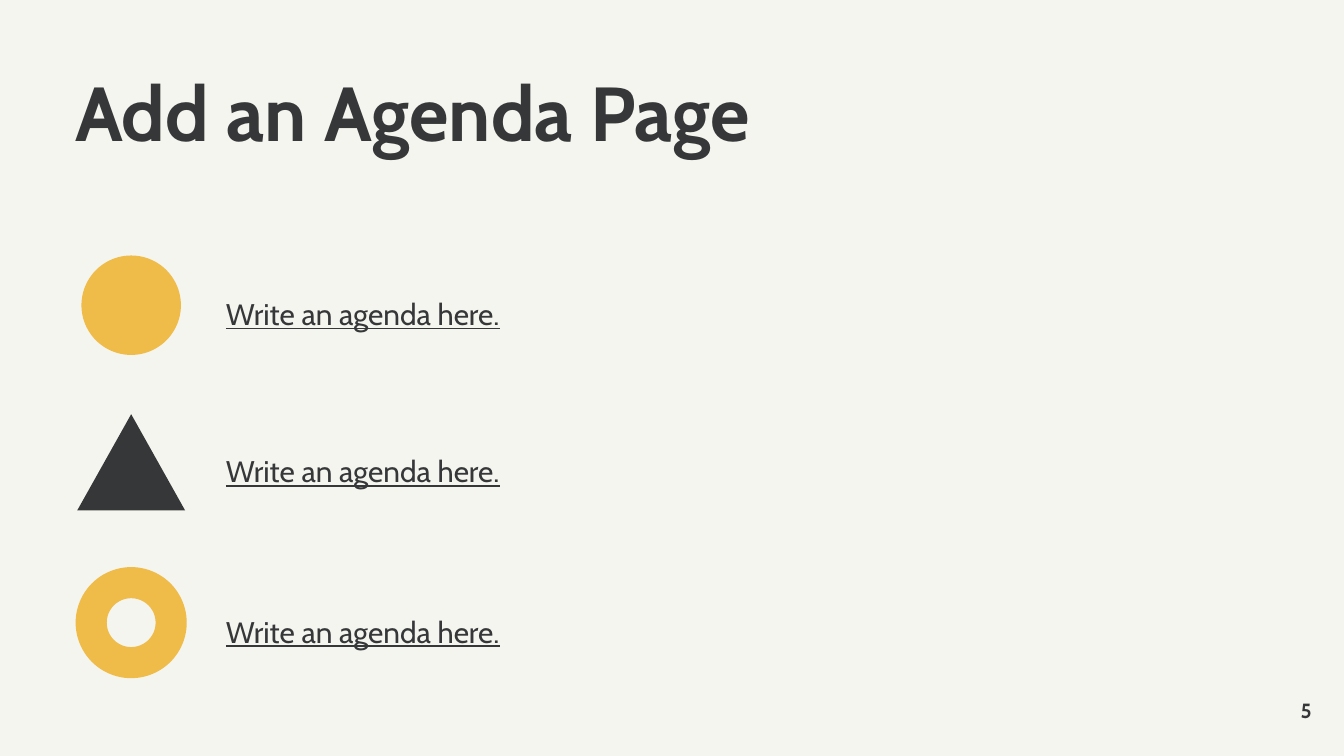
from pptx import Presentation
from pptx import util as u
from pptx.dml.color import RGBColor
from pptx.enum import shapes, text

COLORS = {"paper": "F5F5EF", "ink": "363739", "gold": "EFBC49"}
FONT = "Cabin"

TITLE = "Add an Agenda Page"
PAGE_NUMBER = "5"
ICON = shapes.MSO_SHAPE
# icon, colour, width, height, centre height, adjustment, label (cm)
AGENDA = [
    (ICON.OVAL, "gold", 1.88, 1.88, 5.77, None, "Write an agenda here."),
    (ICON.ISOSCELES_TRIANGLE, "ink", 2.04, 1.82, 8.74, None, "Write an agenda here."),
    (ICON.DONUT, "gold", 2.1, 2.1, 11.77, 0.28, "Write an agenda here."),
]
ICON_CENTER = 2.48
LABEL_LEFT, LABEL_WIDTH, LABEL_HEIGHT = 4.27, 10.9, 0.69
LABEL_RISE = 0.1  # labels sit slightly above the icon centres


def color(name):
    return RGBColor.from_string(COLORS[name])


def add_text(slide, content, left, top, width, height, size, bold=False,
             underline=False, spacing=1.0, align=text.PP_ALIGN.LEFT,
             anchor=text.MSO_ANCHOR.TOP, fit=text.MSO_AUTO_SIZE.NONE):
    shape = slide.shapes.add_textbox(u.Cm(left), u.Cm(top), u.Cm(width), u.Cm(height))
    frame = shape.text_frame
    frame.margin_left = frame.margin_right = frame.margin_top = frame.margin_bottom = 0
    frame.word_wrap = True
    frame.auto_size = fit
    frame.vertical_anchor = anchor
    paragraph = frame.paragraphs[0]
    paragraph.alignment = align
    paragraph.line_spacing = spacing
    run = paragraph.add_run()
    run.text = content
    run.font.name = FONT
    run.font.size = u.Pt(size)
    run.font.bold = bold
    run.font.underline = underline
    run.font.color.rgb = color("ink")
    return shape


def add_icon(slide, kind, fill, width, height, center, adjustment):
    shape = slide.shapes.add_shape(
        kind, u.Cm(ICON_CENTER - width / 2), u.Cm(center - height / 2),
        u.Cm(width), u.Cm(height))
    shape.shadow.inherit = False
    shape.fill.solid()
    shape.fill.fore_color.rgb = color(fill)
    shape.line.fill.background()
    if adjustment is not None:
        shape.adjustments[0] = adjustment


def main():
    presentation = Presentation()
    presentation.slide_width, presentation.slide_height = u.Cm(25.4), u.Cm(14.29)
    slide = presentation.slides.add_slide(presentation.slide_layouts[6])
    slide.background.fill.solid()
    slide.background.fill.fore_color.rgb = color("paper")

    # Title
    add_text(slide, TITLE, 1.42, 1.42, 18, 2, size=41, bold=True, spacing=0.9)

    # Agenda rows
    for kind, fill, width, height, center, adjustment, label in AGENDA:
        add_icon(slide, kind, fill, width, height, center, adjustment)
        add_text(slide, label, LABEL_LEFT, center - LABEL_RISE - LABEL_HEIGHT / 2,
                 LABEL_WIDTH, LABEL_HEIGHT, size=16, underline=True, spacing=1.4,
                 fit=text.MSO_AUTO_SIZE.SHAPE_TO_FIT_TEXT)

    # Page number
    add_text(slide, PAGE_NUMBER, 23.27, 13.18, 1.52, 0.5, size=11, bold=True,
             align=text.PP_ALIGN.RIGHT, anchor=text.MSO_ANCHOR.MIDDLE)

    presentation.save("out.pptx")


if __name__ == "__main__":
    main()
